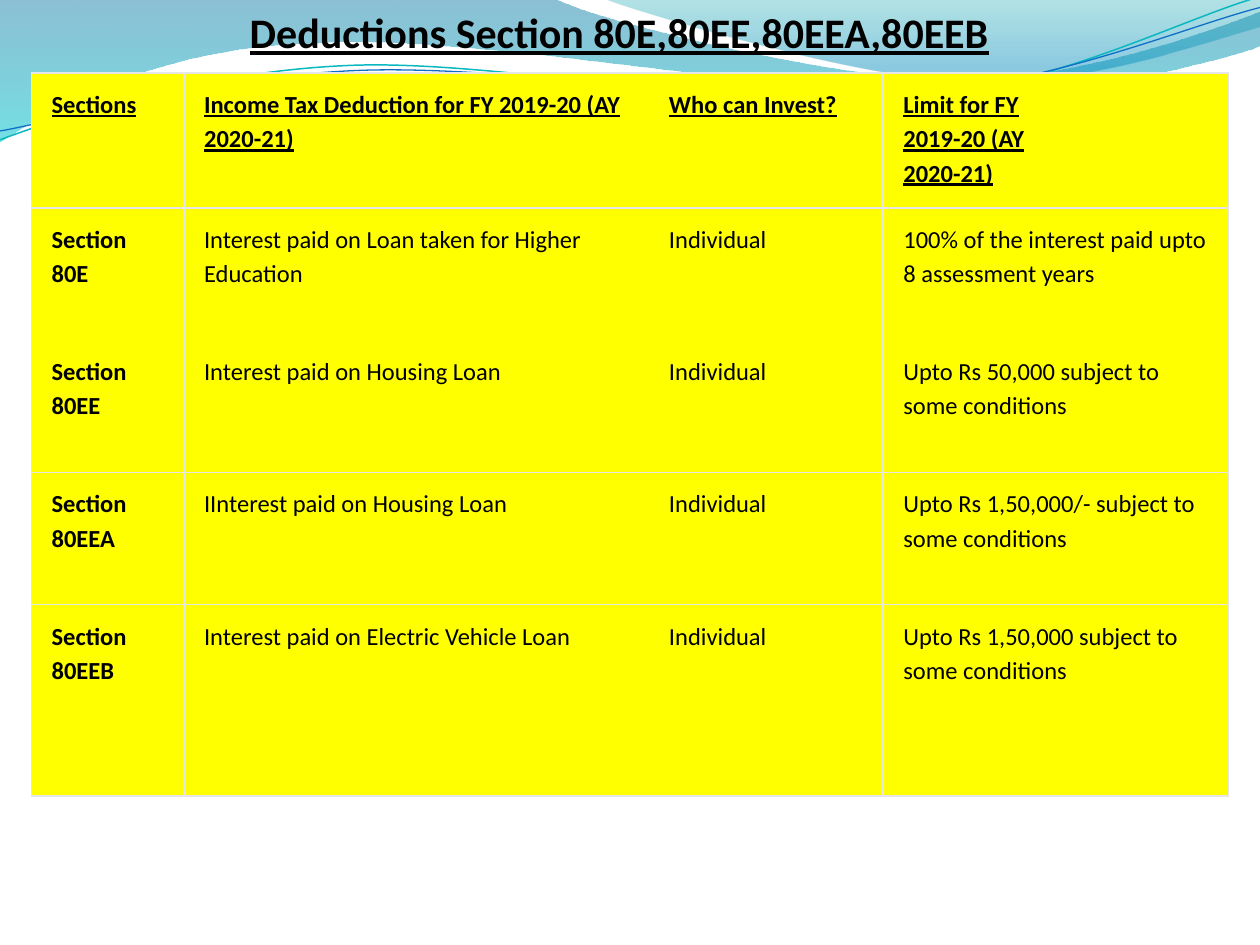
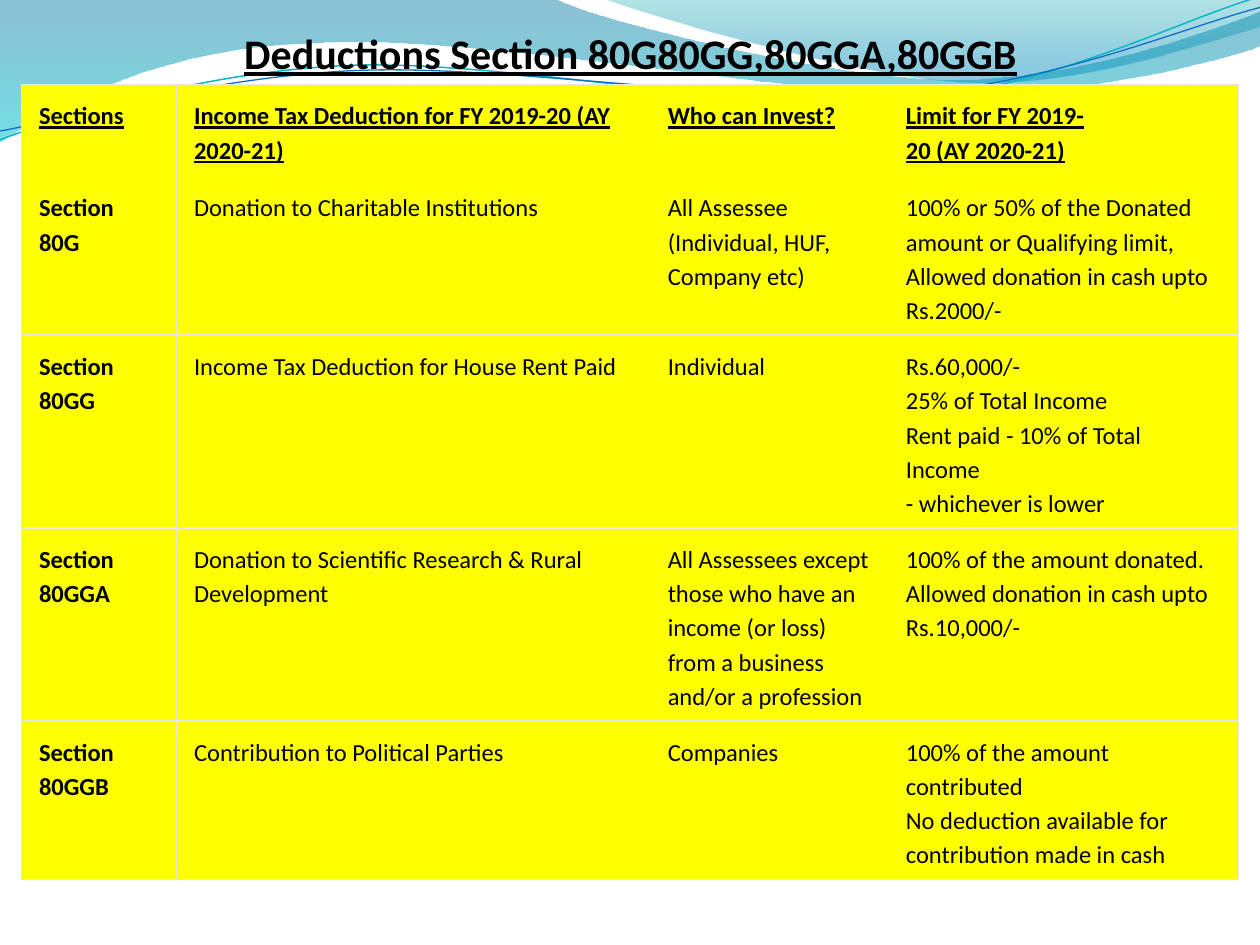
from dataclasses import dataclass
from math import cos, radians, sin

from lxml.etree import SubElement
from pptx import Presentation
from pptx.dml.color import RGBColor
from pptx.enum.text import MSO_ANCHOR, MSO_AUTO_SIZE, PP_ALIGN
from pptx.oxml import parse_xml
from pptx.oxml.ns import nsdecls, qn
from pptx.util import Inches, Pt


@dataclass(frozen=True)
class Theme:
    font: str = "Calibri"
    head: int = 24
    body: int = 14
    lead: float = 1.15
    ink: str = "000000"
    cell: str = "FFFF00"
    rule: str = "E6E6E6"
    teal: str = "0AB8BF"
    blue: str = "0F6FC6"
    # Gradient stops: position, colour, opacity in percent
    deep: tuple = ((0, "0074A1", 45), (1, "00C6CF", 55))
    pale: tuple = ((0, "00A1A9", 30), (0.8, "008BBF", 45))


# The grid has 10 columns and 7.5 rows of square cells
COLS, ROWS = 10, 7.5
UNIT = Inches(1)
HUB = (5, 0.58)  # the thin waves turn about this point
TILT = -2.7

# Wave outlines: a pair is a corner, six numbers are a curve
LEFT = [(0, 0), (4.4, -0.01), (4.76, 0.17, 6.64, 0.63, 7.58, 0.63),
        (8.53, 0.63, 9.58, 0.26, 10, 0.09), (10.01, 0.36),
        (9.83, 0.44, 8.7, 0.76, 7.46, 0.75),
        (6.22, 0.75, 3.82, 0.28, 2.57, 0.34),
        (1.29, 0.36, 0.46, 0.83, -0.01, 1.13), (0, 0)]
RIGHT = [(4.79, -0.01), (5.09, 0.11, 6.82, 0.62, 7.69, 0.65),
         (8.56, 0.69, 9.61, 0.32, 10, 0.21), (10, 0), (4.79, -0.01)]
UPPER = [(0, 1.11), (0.48, 0.93, 1.58, 0.57, 2.77, 0.52),
         (3.95, 0.47, 5.93, 0.89, 7.13, 0.8),
         (8.33, 0.71, 9.38, 0.15, 9.98, -0.02)]
LOWER = [(0, 1.04), (0.47, 0.96, 1.64, 0.61, 2.83, 0.56),
         (4.03, 0.51, 5.97, 0.84, 7.17, 0.75),
         (8.36, 0.67, 9.41, 0.21, 10, 0.06)]

# Table content
HEAD = ["Sections", "Income Tax Deduction for FY 2019-20 (AY 2020-21)",
        "Who can Invest?"]
LOANS = [
    HEAD + ["Limit for FY\n2019-20 (AY\n2020-21)"],
    ["Section 80E", "Interest paid on Loan taken for Higher Education",
     "Individual", "100% of the interest paid upto 8 assessment years"],
    ["Section 80EE", "Interest paid on Housing Loan",
     "Individual", "Upto Rs 50,000 subject to some conditions"],
    ["Section 80EEA", "IInterest paid on Housing Loan",
     "Individual", "Upto Rs 1,50,000/- subject to some conditions"],
    ["Section 80EEB", "Interest paid on Electric Vehicle Loan",
     "Individual", "Upto Rs 1,50,000 subject to some conditions"],
]
GIFTS = [
    HEAD + ["Limit for FY 2019-\n20 (AY 2020-21)"],
    ["Section 80G", "Donation to Charitable Institutions",
     "All Assessee (Individual, HUF, Company etc)",
     "100% or 50% of the Donated amount or Qualifying limit,\n"
     "Allowed donation in cash upto Rs.2000/-"],
    ["Section 80GG", "Income Tax Deduction for House Rent Paid",
     "Individual",
     "Rs.60,000/-\n25% of Total Income\n"
     "Rent paid - 10% of Total Income\n- whichever is lower"],
    ["Section 80GGA", "Donation to Scientific Research & Rural Development",
     "All Assessees except those who have an income (or loss) "
     "from a business and/or a profession",
     "100% of the amount donated.\nAllowed donation in cash upto Rs.10,000/-"],
    ["Section 80GGB", "Contribution to Political Parties", "Companies",
     "100% of the amount contributed\n"
     "No deduction available for contribution made in cash"],
]


def grid(n):
    return round(n * UNIT)


def tint(code):
    return RGBColor.from_string(code)


def spin(x, y, angle):
    """Turn a grid point about the hub and give it as lengths."""
    a = radians(angle)
    dx, dy = x - HUB[0], y - HUB[1]
    return (grid(HUB[0] + dx * cos(a) - dy * sin(a)),
            grid(HUB[1] + dx * sin(a) + dy * cos(a)))


def put(frame, text, font, size, ink, bold=False, line=False,
        align=PP_ALIGN.LEFT, lead=1.0):
    """Write text into a frame; a newline becomes a line break."""
    para = frame.paragraphs[0]
    para.alignment = align
    para.line_spacing = lead
    for i, part in enumerate(text.split("\n")):
        if i:
            para.add_line_break()
        run = para.add_run()
        run.text = part
        face = run.font
        face.name, face.size = font, Pt(size)
        face.bold, face.underline = bold, line
        face.color.rgb = tint(ink)


class Deck:
    def __init__(self, theme):
        self.theme = theme
        self.prs = Presentation()
        self.prs.slide_width = grid(COLS)
        self.prs.slide_height = grid(ROWS)
        self.base = self.prs.slide_layouts[5]
        self.slide = None

    def page(self):
        self.slide = self.prs.slides.add_slide(self.base)

    def title(self, text, left, top, wide, high):
        box = self.slide.shapes.title
        box.left, box.top = grid(left), grid(top)
        box.width, box.height = grid(wide), grid(high)
        frame = box.text_frame
        frame.word_wrap = True
        frame.auto_size = MSO_AUTO_SIZE.NONE
        frame.vertical_anchor = MSO_ANCHOR.TOP
        look = self.theme
        put(frame, text, look.font, look.head, look.ink,
            bold=True, line=True, align=PP_ALIGN.CENTER)

    def curve(self, steps, angle=0):
        """Build an outline, then bend the sides that are curves."""
        legs = [[spin(x, y, -angle) for x, y in zip(s[::2], s[1::2])]
                for s in steps]
        ends = [leg[-1] for leg in legs]
        pen = self.slide.shapes.build_freeform(*ends[0], scale=1.0)
        pen.add_line_segments(ends[1:], close=ends[0] == ends[-1])
        shape = pen.convert_to_shape()
        sides = list(shape.element.iter(qn("a:lnTo")))
        for side, leg in zip(sides, legs[1:]):
            if len(leg) == 3:
                side.clear()
                bend = SubElement(side.getparent(), qn("a:cubicBezTo"))
                for x, y in leg:
                    dot = SubElement(bend, qn("a:pt"))
                    dot.set("x", str(x - shape.left))
                    dot.set("y", str(y - shape.top))
                side.getparent().replace(side, bend)
        shape.rotation = angle
        shape.shadow.inherit = False
        return shape

    def share(self, shape):
        """Hand a shape to the layout that all slides use."""
        mark = str(20 + len(self.base.shapes))
        shape.element.nvSpPr.cNvPr.set("id", mark)
        self.base.shapes.element.append(shape.element)

    def band(self, steps, stops):
        shape = self.curve(steps)
        shape.line.fill.background()
        shape.fill.gradient()
        shape.fill.gradient_angle = 270
        for stop, (spot, code, _) in zip(shape.fill.gradient_stops, stops):
            stop.position, stop.color.rgb = spot, tint(code)
        inks = list(shape.element.spPr.iter(qn("a:srgbClr")))
        for ink, (_, _, part) in zip(inks, stops):
            SubElement(ink, qn("a:alpha")).set("val", str(part * 1000))
        self.share(shape)

    def wave(self, steps, code, width):
        shape = self.curve(steps, TILT)
        shape.fill.background()
        shape.line.color.rgb = tint(code)
        shape.line.width = Pt(width)
        self.share(shape)

    def table(self, data, left, top, wides, highs, pad, bare):
        look = self.theme
        frame = self.slide.shapes.add_table(
            len(data), len(wides), grid(left), grid(top),
            grid(sum(wides)), grid(sum(highs)))
        table = frame.table
        table.first_row = table.horz_banding = False
        for col, wide in zip(table.columns, wides):
            col.width = grid(wide)
        for row, high in zip(table.rows, highs):
            row.height = grid(high)
        for r, line in enumerate(data):
            for c, text in enumerate(line):
                cell = table.cell(r, c)
                cell.margin_left, cell.margin_right = grid(pad), grid(0.15)
                cell.margin_top, cell.margin_bottom = grid(0.1), grid(0.07)
                cell.fill.solid()
                cell.fill.fore_color.rgb = tint(look.cell)
                put(cell.text_frame, text, look.font, look.body, look.ink,
                    bold=r == 0 or c == 0, line=r == 0, lead=look.lead)
        self.rules(frame, len(wides), *bare)

    def rules(self, frame, count, cols, rows):
        """Rule each cell, except along the bare columns and rows."""
        ink = f'<a:solidFill><a:srgbClr val="{self.theme.rule}"/></a:solidFill>'
        for n, props in enumerate(frame.element.iter(qn("a:tcPr"))):
            r, c = divmod(n, count)
            sides = {"L": c in cols, "R": c + 1 in cols,
                     "T": r in rows, "B": r + 1 in rows}
            for i, (side, off) in enumerate(sides.items()):
                props.insert(i, parse_xml(
                    f'<a:ln{side} {nsdecls("a")} w="{Pt(1)}">'
                    f'{"<a:noFill/>" if off else ink}</a:ln{side}>'))


def main():
    look = Theme()
    deck = Deck(look)

    # Loan deductions, with the waves that both slides share
    deck.page()
    deck.band(LEFT, look.deep)
    deck.band(RIGHT, look.pale)
    deck.wave(UPPER, look.teal, 0.85)
    deck.wave(LOWER, look.blue, 0.75)
    deck.title("Deductions Section 80E,80EE,80EEA,80EEB", 0.25, 0, 9.33, 0.57)
    deck.table(LOANS, 0.25, 0.58, [1.21, 3.69, 1.86, 2.74],
               [1.07, 1.05, 1.05, 1.05, 1.52], pad=0.16, bare=({2}, {2}))

    # Donation and rent deductions
    deck.page()
    deck.title("Deductions Section 80G80GG,80GGA,80GGB", 0.42, 0.17, 9.17, 0.5)
    deck.table(GIFTS, 0.17, 0.67, [1.23, 3.76, 1.89, 2.78],
               [0.73, 1.26, 1.53, 1.53, 1.26], pad=0.14, bare=({2, 3}, {1}))

    deck.prs.save("out.pptx")


if __name__ == "__main__":
    main()
